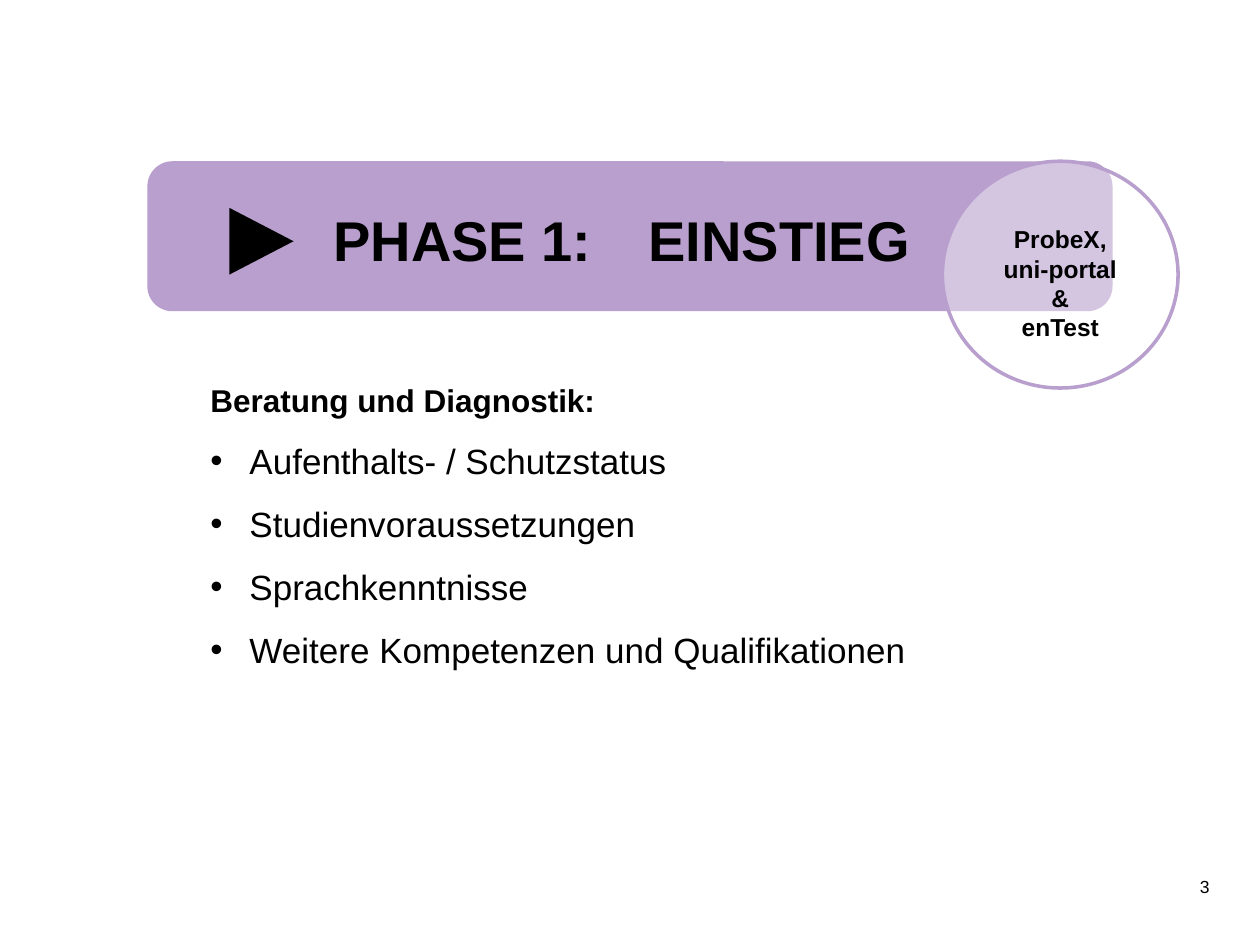
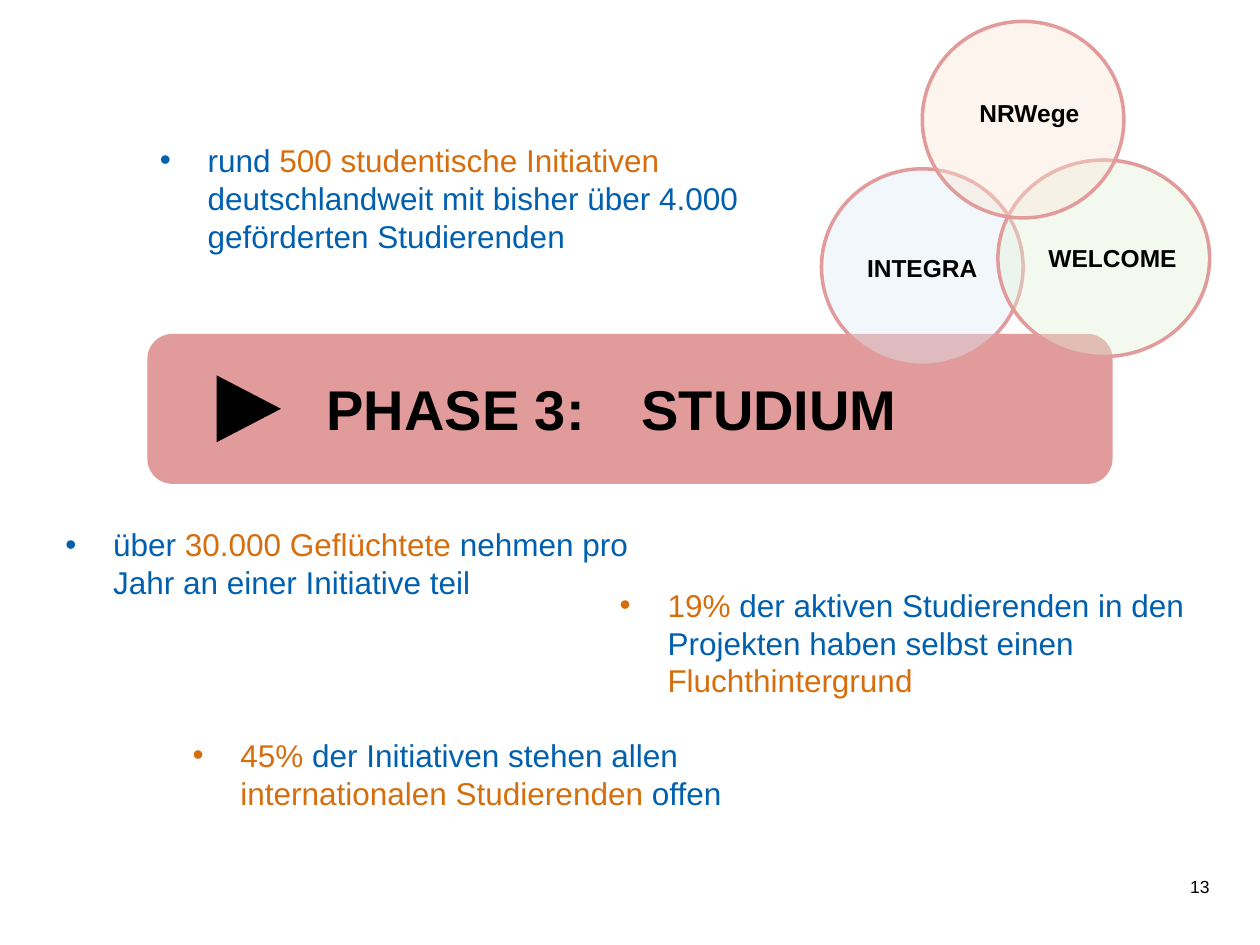
from dataclasses import dataclass

import pptx
import pptx.dml.color
import pptx.enum.shapes
import pptx.enum.text
import pptx.oxml.ns
import pptx.util
from lxml import etree
from pptx.util import Inches

FONT = "Arial"
BLACK = "000000"
WHITE = "FFFFFF"
BLUE = "0060AF"
ORANGE = "D76E0D"
PURPLE = "B89FCD"
ROSE = "E19B9B"

SHAPE = pptx.enum.shapes.MSO_SHAPE
ALIGN = pptx.enum.text.PP_ALIGN
ANCHOR = pptx.enum.text.MSO_ANCHOR


@dataclass
class Area:
    left: float
    top: float
    width: float
    height: float

    def lengths(self) -> list:
        return [Inches(n) for n in (self.left, self.top, self.width, self.height)]


@dataclass
class Phase:
    title: str
    color: str
    band_top: float
    title_area: Area
    arrow_area: Area
    number: str


@dataclass
class Circle:
    area: Area
    fill: str
    label_area: Area
    lines: list[str]


@dataclass
class Fact:
    area: Area
    spans: list[tuple[str, str]]


# Shared formatting
def rgb(color: str) -> pptx.dml.color.RGBColor:
    return pptx.dml.color.RGBColor.from_string(color)


def set_font(para, size: float, bold: bool = False, color: str = BLACK) -> None:
    para.font.name = FONT
    para.font.size = pptx.util.Pt(size)
    para.font.bold = bold
    para.font.color.rgb = rgb(color)


def add_element(parent, tag: str, **attributes: str):
    return etree.SubElement(parent, pptx.oxml.ns.qn(tag), **attributes)


def set_bullet(para, indent: float) -> None:
    properties = para._p.get_or_add_pPr()
    properties.set("marL", str(Inches(indent)))
    properties.set("indent", str(Inches(-indent)))
    add_element(properties, "a:buFont", typeface=FONT)
    add_element(properties, "a:buChar", char="•")


def place(box, area: Area):
    box.left, box.top, box.width, box.height = area.lengths()
    frame = box.text_frame
    frame.word_wrap = True
    frame.auto_size = pptx.enum.text.MSO_AUTO_SIZE.NONE
    return frame


def add_text(page, area: Area):
    return place(page.shapes.add_textbox(*area.lengths()), area)


def add_filled(page, kind, area: Area, color: str):
    shape = page.shapes.add_shape(kind, *area.lengths())
    shape.shadow.inherit = False
    shape.fill.solid()
    shape.fill.fore_color.rgb = rgb(color)
    shape.line.fill.background()
    return shape


# Slide parts
def add_phase(deck, layout: int, phase: Phase):
    page = deck.slides.add_slide(deck.slide_layouts[layout])
    add_filled(page, SHAPE.ROUNDED_RECTANGLE,
               Area(1.17, phase.band_top, 7.66, 1.19), phase.color)

    # The title lies above its band
    title = page.shapes.title
    page.shapes._spTree.append(title._element)
    frame = place(title, phase.title_area)
    frame.vertical_anchor = ANCHOR.MIDDLE
    para = frame.paragraphs[0]
    para.text = phase.title
    para.alignment = ALIGN.CENTER
    tabs = add_element(para._p.get_or_add_pPr(), "a:tabLst")
    add_element(tabs, "a:tab", pos=str(Inches(2.5)), algn="l")
    set_font(para, 32, bold=True)

    arrow = add_filled(page, SHAPE.ISOSCELES_TRIANGLE, phase.arrow_area, BLACK)
    arrow.rotation = 90

    # Page number
    frame = add_text(page, Area(8.42, 6.95, 1.18, 0.55))
    frame.margin_left = frame.margin_right = 0
    frame.margin_top = frame.margin_bottom = 0
    para = frame.paragraphs[0]
    para.text = phase.number
    para.alignment = ALIGN.RIGHT
    set_font(para, 10)
    return page


def add_circle(page, circle: Circle, line_color: str) -> None:
    shape = add_filled(page, SHAPE.OVAL, circle.area, circle.fill)
    fill_color = shape._element.spPr.find(".//" + pptx.oxml.ns.qn("a:srgbClr"))
    add_element(fill_color, "a:alpha", val="40000")
    shape.line.color.rgb = rgb(line_color)
    shape.line.width = pptx.util.Pt(2)

    frame = add_text(page, circle.label_area)
    frame.text = "\n".join(circle.lines)
    for para in frame.paragraphs:
        para.alignment = ALIGN.CENTER
        set_font(para, 14, bold=True)


def add_list(page, area: Area, heading: str, items: list[str]) -> None:
    body = page.placeholders[1]
    page.shapes._spTree.append(body._element)
    frame = place(body, area)
    frame.text = "\n".join([heading, *items])
    first, *others = frame.paragraphs
    properties = first._p.get_or_add_pPr()
    properties.set("marL", "0")
    properties.set("indent", "0")
    first.space_before = pptx.util.Pt(0)
    add_element(properties, "a:buNone")
    set_font(first, 18, bold=True)
    for para in others:
        para.line_spacing = 1.5
        para.space_before = pptx.util.Pt(0)
        set_bullet(para, 0.31)
        set_font(para, 20)


def add_fact(page, fact: Fact) -> None:
    para = add_text(page, fact.area).paragraphs[0]
    set_bullet(para, 0.38)
    para.font.name = FONT
    para.font.size = pptx.util.Pt(18)
    for text, color in fact.spans:
        span = para.add_run()
        span.text = text
        span.font.color.rgb = rgb(color)


# Content
ENTRY = Phase("PHASE 1: \tEINSTIEG", PURPLE, 1.28, Area(1.51, 1.58, 6.85, 0.64),
              Area(1.81, 1.66, 0.53, 0.51), "3")
STUDY = Phase("PHASE 3: \tSTUDIUM", ROSE, 2.65, Area(1.43, 2.92, 6.85, 0.64),
              Area(1.71, 2.99, 0.53, 0.51), "13")

TESTS = Circle(Area(7.48, 1.28, 1.87, 1.8), WHITE, Area(7.54, 1.73, 1.75, 1.04),
               ["ProbeX,", "uni-portal", "&", "enTest"])
TOPICS = ["Aufenthalts- / Schutzstatus", "Studienvoraussetzungen",
          "Sprachkenntnisse", "Weitere Kompetenzen und Qualifikationen"]

PROGRAMMES = [
    Circle(Area(6.52, 1.34, 1.6, 1.56), "DEEBF7",
           Area(6.73, 1.96, 1.18, 0.34), ["INTEGRA"]),
    Circle(Area(7.92, 1.27, 1.68, 1.56), "E2F0D9",
           Area(7.99, 1.88, 1.68, 0.34), ["WELCOME"]),
    Circle(Area(7.32, 0.17, 1.6, 1.56), "FBE5D6",
           Area(7.51, 0.73, 1.32, 0.34), ["NRWege"]),
]
FACTS = [
    Fact(Area(1.17, 1.07, 5, 1.01), [
        ("rund ", BLUE), ("500 studentische Initiativen ", ORANGE),
        ("deutschlandweit mit bisher über 4.000 geförderten Studierenden", BLUE)]),
    Fact(Area(0.42, 4.12, 5, 0.71), [
        ("über ", BLUE), ("30.000 Geflüchtete ", ORANGE),
        ("nehmen pro Jahr an einer Initiative teil", BLUE)]),
    Fact(Area(4.82, 4.6, 5, 1.01), [
        ("19%", ORANGE),
        (" der aktiven Studierenden in den Projekten haben selbst einen ", BLUE),
        ("Fluchthintergrund", ORANGE)]),
    Fact(Area(1.43, 5.79, 5, 0.71), [
        ("45% ", ORANGE), ("der Initiativen stehen allen ", BLUE),
        ("internationalen Studierenden ", ORANGE), ("offen", BLUE)]),
]


def main() -> None:
    deck = pptx.Presentation()
    deck.slide_width, deck.slide_height = Inches(10), Inches(7.5)

    # Phase 1: title and content layout
    page = add_phase(deck, 1, ENTRY)
    add_circle(page, TESTS, ENTRY.color)
    add_list(page, Area(1.57, 2.97, 6.85, 2.76), "Beratung und Diagnostik:", TOPICS)

    # Phase 3: title only layout
    page = add_phase(deck, 5, STUDY)
    for programme in PROGRAMMES:
        add_circle(page, programme, STUDY.color)
    for fact in FACTS:
        add_fact(page, fact)

    deck.save("out.pptx")


if __name__ == "__main__":
    main()
